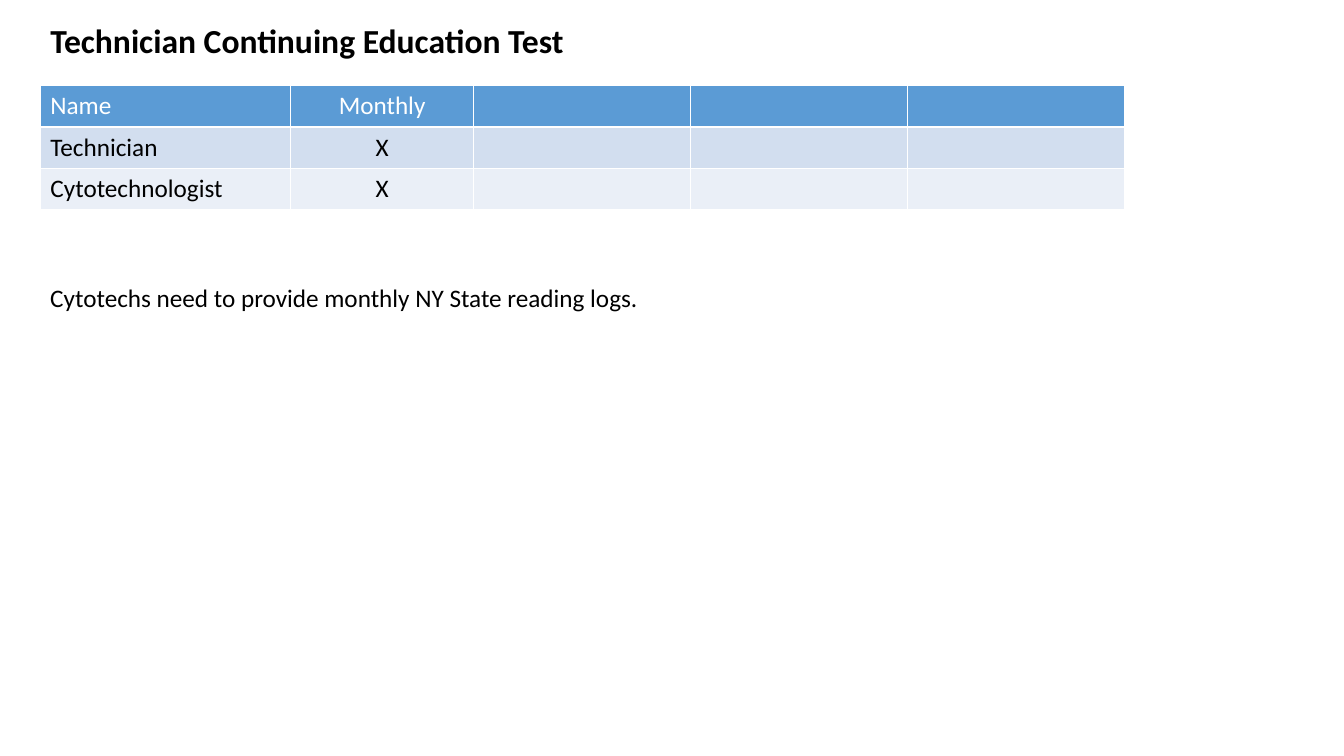
from pptx import Presentation
from pptx import util as u
from pptx.dml.color import RGBColor
from pptx.enum import text

BLACK = RGBColor(0x00, 0x00, 0x00)
WHITE = RGBColor(0xFF, 0xFF, 0xFF)
HEADER_BLUE = RGBColor(0x5B, 0x9B, 0xD5)
BAND_DARK = RGBColor(0xD2, 0xDE, 0xEF)
BAND_LIGHT = RGBColor(0xEA, 0xEF, 0xF7)

LEFT = 0.4
COLUMN_WIDTHS = [2.48, 1.82, 2.15, 2.15, 2.15]
ROW_HEIGHT = 0.41
TEST_SCHEDULE = [
    ("Name", "Monthly"),
    ("Technician", "X"),
    ("Cytotechnologist", "X"),
]
ROW_STYLES = [(HEADER_BLUE, WHITE), (BAND_DARK, BLACK), (BAND_LIGHT, BLACK)]


def write(tf, content, size=18, color=BLACK, bold=False, align=text.PP_ALIGN.LEFT, font="Calibri"):
    p = tf.paragraphs[0]
    p.alignment = align
    r = p.add_run()
    r.text = content
    r.font.name = font
    r.font.size = u.Pt(size)
    r.font.bold = bold
    r.font.color.rgb = color


class SlideBuilder:
    def __init__(self, slide):
        self.s = slide

    def text_box(self, left, top, width, height, content, **style):
        sp = self.s.shapes.add_textbox(*map(u.Inches, (left, top, width, height)))
        tf = sp.text_frame
        tf.word_wrap = False
        tf.auto_size = text.MSO_AUTO_SIZE.SHAPE_TO_FIT_TEXT
        write(tf, content, **style)

    def table(self, left, top, widths, row_height, rows, row_styles):
        """Add a table; white cell borders come from the default table style."""
        size = (sum(widths), row_height * len(rows))
        table = self.s.shapes.add_table(
            len(rows), len(widths), *map(u.Inches, (left, top, *size))).table
        for column, width in zip(table.columns, widths):
            column.width = u.Inches(width)
        for row, values, (fill, color) in zip(table.rows, rows, row_styles):
            row.height = u.Inches(row_height)
            for cell in row.cells:
                cell.fill.solid()
                cell.fill.fore_color.rgb = fill
            aligns = (text.PP_ALIGN.LEFT, text.PP_ALIGN.CENTER)
            for cell, value, align in zip(row.cells, values, aligns):
                write(cell.text_frame, value, color=color, align=align)


def main():
    prs = Presentation()
    prs.slide_width, prs.slide_height = u.Inches(13.33), u.Inches(7.5)
    builder = SlideBuilder(prs.slides.add_slide(prs.slide_layouts[6]))
    builder.table(LEFT, 0.85, COLUMN_WIDTHS, ROW_HEIGHT, TEST_SCHEDULE, ROW_STYLES)
    builder.text_box(LEFT, 0.15, 5.42, 0.5, "Technician Continuing Education Test",
                     size=24, bold=True)
    builder.text_box(LEFT, 2.75, 6.1, 0.4,
                     "Cytotechs need to provide monthly NY State reading logs.")
    prs.save("out.pptx")


if __name__ == "__main__":
    main()
